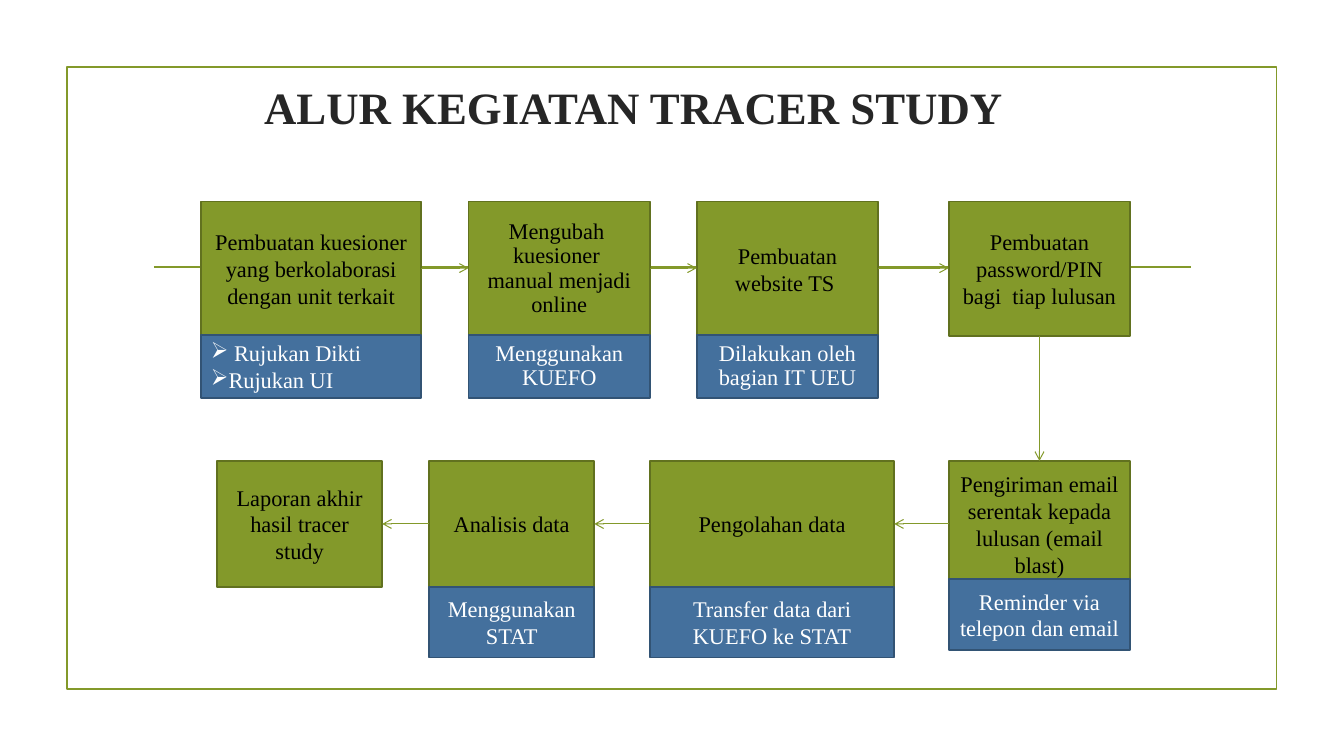
from dataclasses import dataclass
from itertools import pairwise

from lxml import etree
from pptx import Presentation
from pptx.dml.color import RGBColor
from pptx.enum.shapes import MSO_CONNECTOR, MSO_SHAPE
from pptx.enum.text import MSO_ANCHOR, PP_ALIGN
from pptx.oxml.ns import qn
from pptx.util import Pt

RECT = MSO_SHAPE.RECTANGLE
STRAIGHT = MSO_CONNECTOR.STRAIGHT
MIDDLE = MSO_ANCHOR.MIDDLE
LEFT, CENTER = PP_ALIGN.LEFT, PP_ALIGN.CENTER

GREEN = RGBColor(0x83, 0x99, 0x2A)
MOSS = RGBColor(0x61, 0x71, 0x1F)
BLUE = RGBColor(0x44, 0x70, 0x9D)
NAVY = RGBColor(0x32, 0x53, 0x74)
INK = RGBColor(0x26, 0x26, 0x26)
BLACK = RGBColor(0, 0, 0)
WHITE = RGBColor(0xFF, 0xFF, 0xFF)
FONT = "Times New Roman"


@dataclass(frozen=True)
class Note:
    """Blue box under a step."""
    text: str
    top: float
    height: float
    spacing: float = 1.0
    bullet: str = ""


@dataclass(frozen=True)
class Step:
    """Green box of the flow."""
    text: str
    left: float
    width: float
    spacing: float = 1.0
    note: Note | None = None


# Steps in the order of the flow: first row runs right, second runs left
TOP, TALL = 144, 96
LOW, SHORT = 329.25, 90
FIRST = [
    Step("Pembuatan kuesioner yang berkolaborasi dengan unit terkait", 143.5, 157.5,
         note=Note(" Rujukan Dikti\nRujukan UI", 239.25, 45, bullet="➢")),
    Step("Mengubah  kuesioner  manual menjadi online", 334.75, 129.5, 0.9,
         Note("Menggunakan KUEFO", 239.25, 45, 0.9)),
    Step("Pembuatan website TS ", 497.75, 129.5,
         note=Note("Dilakukan oleh bagian IT UEU", 239.25, 45, 0.9)),
    Step("Pembuatan password/PIN bagi  tiap lulusan", 677.75, 129.5),
]
SECOND = [
    Step("Pengiriman email serentak kepada lulusan (email blast)", 677.75, 129.5,
         note=Note("Reminder via telepon dan email", 413.75, 50.5)),
    Step("Pengolahan data", 464.25, 174.5,
         note=Note("Transfer data dari KUEFO ke STAT", 419.25, 50.5)),
    Step("Analisis data", 306.5, 118,
         note=Note("Menggunakan STAT", 419.25, 50.5)),
    Step("Laporan akhir hasil tracer study", 155, 118),
]


def write(frame, text: str, *, size: float = 16, color: RGBColor = BLACK,
          bold: bool = False, align=CENTER, spacing: float = 1.0,
          bullet: str = "") -> None:
    frame.word_wrap = True
    frame.vertical_anchor = MIDDLE
    for i, line in enumerate(text.split("\n")):
        para = frame.paragraphs[0] if i == 0 else frame.add_paragraph()
        if bullet:
            props = para._p.get_or_add_pPr()
            props.set("marL", "0")
            props.set("indent", "0")
            etree.SubElement(props, qn("a:buChar")).set("char", bullet)
        para.alignment = align
        para.line_spacing = spacing
        run = para.add_run()
        run.text = line
        font = run.font
        font.name, font.size, font.bold = FONT, Pt(size), bold
        font.color.rgb = color


def add_box(shapes, left: float, top: float, width: float, height: float,
            edge: RGBColor, fill: RGBColor | None = None):
    box = shapes.add_shape(RECT, Pt(left), Pt(top), Pt(width), Pt(height))
    box.shadow.inherit = False
    if fill is None:
        box.fill.background()
    else:
        box.fill.solid()
        box.fill.fore_color.rgb = fill
    box.line.color.rgb = edge
    box.line.width = Pt(1.25)
    return box


def add_line(shapes, x1: float, y1: float, x2: float, y2: float,
             width: float = 0.75, arrow: bool = True) -> None:
    link = shapes.add_connector(STRAIGHT, Pt(x1), Pt(y1), Pt(x2), Pt(y2))
    link.line.color.rgb = GREEN
    link.line.width = Pt(width)
    if arrow:
        stroke = link.line._get_or_add_ln()
        etree.SubElement(stroke, qn("a:tailEnd")).set("type", "arrow")
    etree.SubElement(link._element.spPr, qn("a:effectLst"))


def add_step(shapes, step: Step, top: float, height: float) -> None:
    box = add_box(shapes, step.left, top, step.width, height, MOSS, GREEN)
    write(box.text_frame, step.text, spacing=step.spacing)
    note = step.note
    if note:
        box = add_box(shapes, step.left, note.top, step.width, note.height, NAVY, BLUE)
        write(box.text_frame, note.text, color=WHITE, spacing=note.spacing,
              bullet=note.bullet, align=LEFT if note.bullet else CENTER)


def main() -> None:
    deck = Presentation()
    deck.slide_width, deck.slide_height = Pt(960), Pt(540)
    slide = deck.slides.add_slide(deck.slide_layouts[5])
    shapes = slide.shapes

    # Frame and rule behind the flow
    add_box(shapes, 47.75, 48, 864, 444, GREEN)
    add_line(shapes, 110, 190.75, 850.5, 190.75, width=1.25, arrow=False)

    # Title
    title = shapes.title
    title.left, title.top, title.width, title.height = Pt(67), Pt(24), Pt(771), Pt(104)
    write(title.text_frame, "ALUR KEGIATAN TRACER STUDY", size=32, color=INK, bold=True)

    # Steps with their notes
    for row, top, height in ((FIRST, TOP, TALL), (SECOND, LOW, SHORT)):
        for step in row:
            add_step(shapes, step, top, height)

    # Arrows along each row, and down between the rows
    for a, b in pairwise(FIRST):
        add_line(shapes, a.left + a.width, 191.5, b.left, 191.5)
    for a, b in pairwise(SECOND):
        add_line(shapes, a.left, 374.25, b.left + b.width, 374.25)
    last = FIRST[-1]
    mid = last.left + last.width / 2
    add_line(shapes, mid, TOP + TALL, mid, LOW)

    deck.save("out.pptx")


if __name__ == "__main__":
    main()
